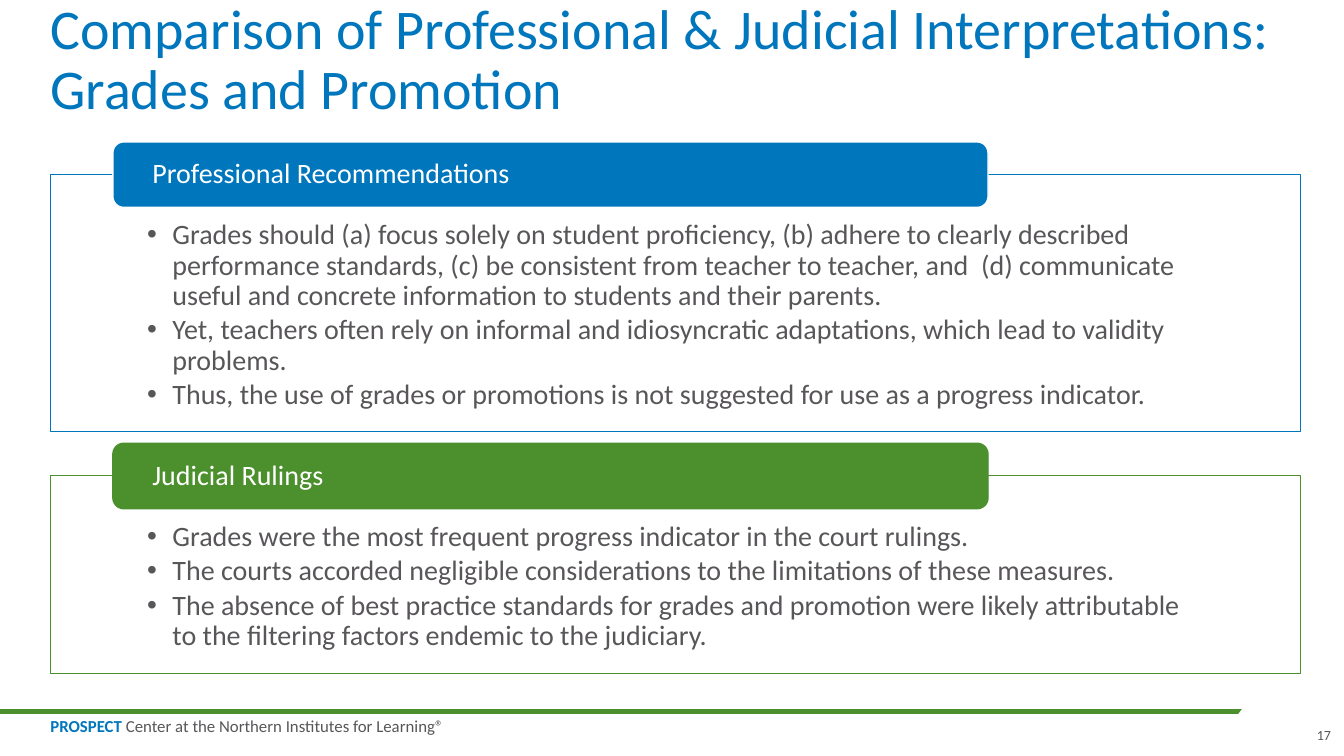
from pptx import Presentation
from pptx.dml.color import RGBColor
from pptx.enum.shapes import MSO_CONNECTOR, MSO_SHAPE
from pptx.enum.text import MSO_ANCHOR, MSO_AUTO_SIZE, PP_ALIGN
from pptx.oxml.ns import qn
from pptx.util import Inches, Pt
from lxml.etree import SubElement

WIDE, HIGH = Inches(13.33), Inches(7.5)
BLUE, GREEN, GRAY, WHITE = "0076BD", "4C902D", "59565A", "FFFFFF"
LEFT, SPAN = 3.75, 93.02
PANELS = [
    ("Professional Recommendations", BLUE, WHITE, 23.07, 34, [
        "Grades should (a) focus solely on student proficiency, (b) adhere to clearly described "
        "performance standards, (c) be consistent from teacher to teacher, and  (d) communicate "
        "useful and concrete information to students and their parents.",
        "Yet, teachers often rely on informal and idiosyncratic adaptations, which lead to validity "
        "problems.",
        "Thus, the use of grades or promotions is not suggested for use as a progress indicator.",
    ]),
    ("Judicial Rulings", GREEN, GREEN, 62.93, 26.13, [
        "Grades were the most frequent progress indicator in the court rulings.",
        "The courts accorded negligible considerations to the limitations of these measures.",
        "The absence of best practice standards for grades and promotion were likely attributable "
        "to the filtering factors endemic to the judiciary.",
    ]),
]


def color(code):
    return RGBColor.from_string(code)


def place(x, y, w, h):
    return [round(side * part / 100) for side, part in zip((WIDE, HIGH) * 2, (x, y, w, h))]


def frame(shape, pads=(0, 0, 0, 0), anchor=MSO_ANCHOR.TOP, wrap=True):
    text = shape.text_frame
    text.auto_size = MSO_AUTO_SIZE.NONE
    text.word_wrap = wrap
    text.vertical_anchor = anchor
    text.margin_left, text.margin_top, text.margin_right, text.margin_bottom = map(Inches, pads)
    return text


def write(para, words, size, code, bold=False):
    run = para.add_run()
    run.text = words
    run.font.name = "Calibri"
    run.font.size = Pt(size)
    run.font.bold = bold
    run.font.color.rgb = color(code)


def align(para, side=PP_ALIGN.LEFT, lines=0.9):
    para.alignment = side
    para.line_spacing = lines


def bullet(para):
    props = para._p.get_or_add_pPr()
    props.set("marL", str(Inches(0.25)))
    props.set("indent", str(-Inches(0.25)))
    SubElement(props, qn("a:buFont"), typeface="Arial")
    SubElement(props, qn("a:buChar"), char="•")


def block(slide, kind, box, fill, edge=None):
    shape = slide.shapes.add_shape(kind, *place(*box))
    shape.shadow.inherit = False
    shape.fill.solid()
    shape.fill.fore_color.rgb = color(fill)
    if edge:
        shape.line.color.rgb = color(edge)
        shape.line.width = Pt(1)
    else:
        shape.line.fill.background()
    return shape


def panel(slide, label, tint, edge, top, tall, items):
    body = block(slide, MSO_SHAPE.RECTANGLE, (LEFT, top, SPAN, tall), WHITE, tint)
    text = frame(body, (0.96, 0.46, 0.96, 0.16))
    for spot, item in enumerate(items):
        para = text.add_paragraph() if spot else text.paragraphs[0]
        bullet(para)
        align(para)
        para.space_after = Pt(3)
        write(para, item, 20, GRAY)
    tab = block(slide, MSO_SHAPE.ROUNDED_RECTANGLE, (8.4, top - 4.3, 65.12, 8.67), tint, edge)
    para = frame(tab, (0.36, 0, 0.36, 0), MSO_ANCHOR.MIDDLE).paragraphs[0]
    align(para)
    write(para, label, 20, WHITE)


def title(slide, words):
    shape = slide.shapes.title
    shape.left, shape.top, shape.width, shape.height = place(LEFT, 0, SPAN, 16.13)
    para = frame(shape, anchor=MSO_ANCHOR.BOTTOM).paragraphs[0]
    align(para)
    write(para, words, 40, BLUE)


def note(slide, box, runs, size, side, anchor, lines):
    shape = slide.shapes.add_textbox(*place(*box))
    para = frame(shape, anchor=anchor, wrap=False).paragraphs[0]
    align(para, side, lines)
    for words, code, bold in runs:
        write(para, words, size, code, bold)


def footer(slide):
    x, y, w, h = place(0, 94.13, 97.5, 0)
    rule = slide.shapes.add_connector(MSO_CONNECTOR.STRAIGHT, x, y, x + w, y + h)
    rule.line.color.rgb = color(GREEN)
    rule.line.width = Pt(3)
    SubElement(rule._element.spPr, qn("a:effectLst"))
    mask = block(slide, MSO_SHAPE.OVAL, (91.22, 90.27, 8.93, 7.73), WHITE)
    mask.rotation = 332.1
    note(slide, (LEFT, 95.07, 30.16, 2.27),
         [("PROSPECT", BLUE, True), (" Center at the Northern Institutes for Learning®", GRAY, False)],
         12, PP_ALIGN.LEFT, MSO_ANCHOR.TOP, 0.85)
    note(slide, (97.75, 96, 1.28, 2.27), [("17", GRAY, False)],
         10, PP_ALIGN.RIGHT, MSO_ANCHOR.BOTTOM, 1.0)


def main():
    deck = Presentation()
    deck.slide_width, deck.slide_height = WIDE, HIGH
    slide = deck.slides.add_slide(deck.slide_layouts[5])
    footer(slide)
    title(slide, "Comparison of Professional & Judicial Interpretations: Grades and Promotion")
    for part in PANELS:
        panel(slide, *part)
    deck.save("out.pptx")


if __name__ == "__main__":
    main()
